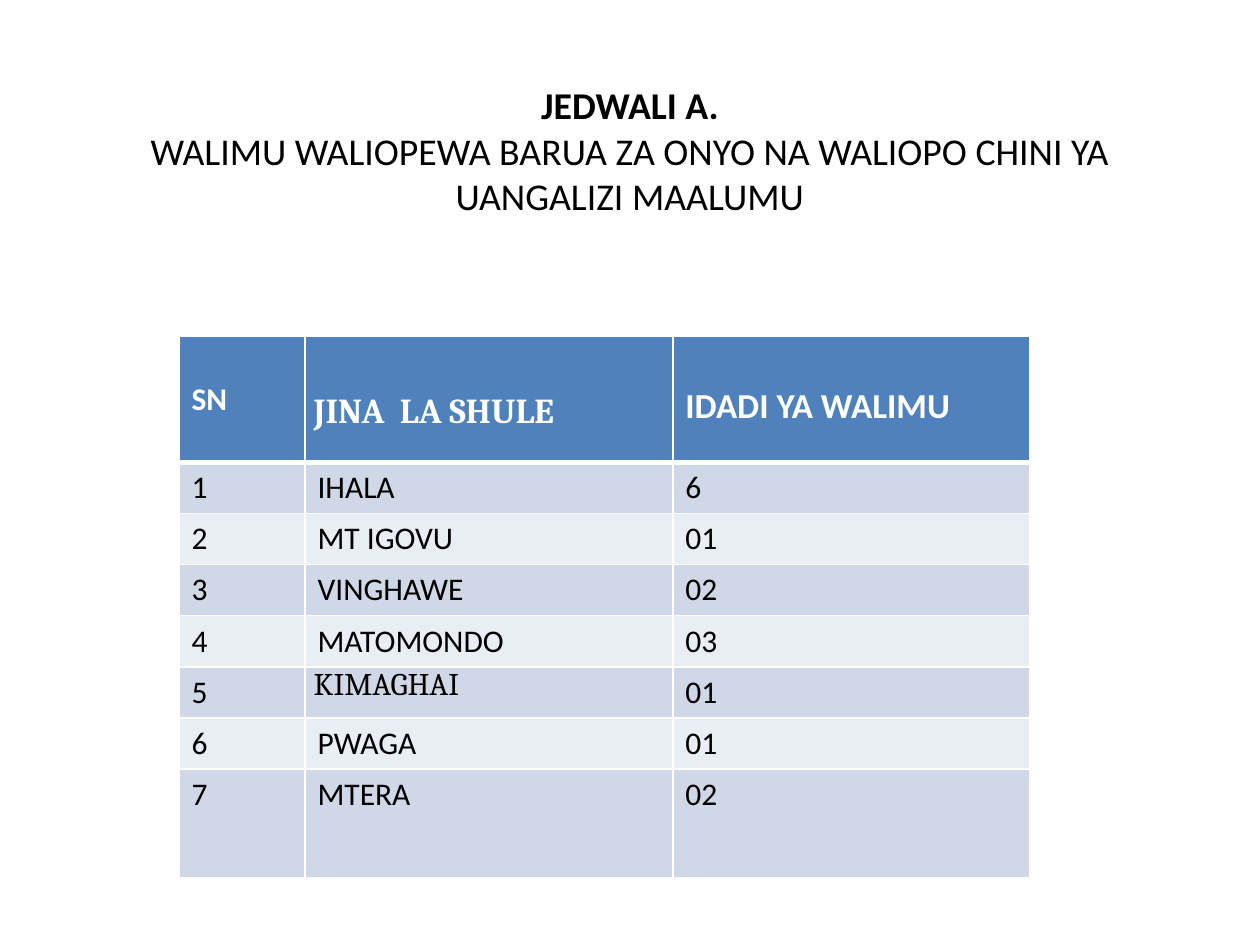
from lxml.etree import SubElement
from pptx import Presentation
from pptx.dml.color import RGBColor
from pptx.enum.text import MSO_ANCHOR, MSO_AUTO_SIZE, PP_ALIGN
from pptx.oxml.ns import qn
from pptx.util import Inches, Pt

BLACK = RGBColor(0x00, 0x00, 0x00)
WHITE = RGBColor(0xFF, 0xFF, 0xFF)
HEADER_BLUE = RGBColor(0x4F, 0x81, 0xBD)
BANDS = [RGBColor(0xD0, 0xD8, 0xE8), RGBColor(0xE9, 0xED, 0xF4)]

# Content
TITLE = "JEDWALI A."
SUBTITLE = "WALIMU WALIOPEWA BARUA ZA ONYO NA WALIOPO CHINI YA UANGALIZI MAALUMU"
HEADERS = [  # text, size, font, top margin
    ("SN", 18, "Calibri", 0.35),
    ("JINA  LA SHULE", 20, "Cambria", 0.44),
    ("IDADI YA WALIMU", 20, "Calibri", 0.39),
]
SCHOOLS = [
    ("1", "IHALA", "6"),
    ("2", "MT IGOVU", "01"),
    ("3", "VINGHAWE", "02"),
    ("4", "MATOMONDO", "03"),
    ("5", "KIMAGHAI", "01"),
    ("6", "PWAGA", "01"),
    ("7", "MTERA", "02"),
]
COL_WIDTHS = [1, 2.92, 2.83]
ROW_HEIGHTS = [1] + [0.4] * 6 + [0.86]


def add_text(p, text, size=18, font="Calibri", color=BLACK, bold=False):
    r = p.add_run()
    r.text = text
    r.font.size = Pt(size)
    r.font.name = font
    r.font.bold = bold
    r.font.color.rgb = color


def set_borders(cell, top=1, bottom=1):
    tc_pr = cell._tc.get_or_add_tcPr()
    widths = {"lnL": 1, "lnR": 1, "lnT": top, "lnB": bottom}
    for side, width in widths.items():
        ln = SubElement(tc_pr, qn("a:" + side), w=str(Pt(width)))
        fill = SubElement(ln, qn("a:solidFill"))
        SubElement(fill, qn("a:srgbClr"), val=str(WHITE))


def format_cell(cell, text, fill, top_margin=0.05, top=1, bottom=1, **fmt):
    set_borders(cell, top, bottom)
    cell.fill.solid()
    cell.fill.fore_color.rgb = fill
    cell.margin_top = Inches(top_margin)
    p = cell.text_frame.paragraphs[0]
    if fmt.get("font") == "Cambria":
        cell.margin_left = cell.margin_right = Inches(0.07)
        cell.margin_bottom = 0
        p.alignment = PP_ALIGN.JUSTIFY
        p.space_after = Pt(8)
    add_text(p, text, **fmt)


prs = Presentation()
prs.slide_width, prs.slide_height = Inches(10), Inches(7.5)
s = prs.slides.add_slide(prs.slide_layouts[5])

# Title
title = s.shapes.title
title.left, title.top = Inches(0.5), Inches(0.3)
title.width, title.height = Inches(9), Inches(1.78)
tf = title.text_frame
tf.word_wrap = True
tf.auto_size = MSO_AUTO_SIZE.NONE
tf.vertical_anchor = MSO_ANCHOR.MIDDLE
p = tf.paragraphs[0]
p.alignment = PP_ALIGN.CENTER
add_text(p, TITLE, size=21.6, bold=True)
p.add_line_break()
add_text(p, SUBTITLE, size=21.6)

# Table grid
table = s.shapes.add_table(
    len(ROW_HEIGHTS), len(COL_WIDTHS), Inches(1.42), Inches(2.67),
    Inches(sum(COL_WIDTHS)), Inches(sum(ROW_HEIGHTS))).table
for col, width in zip(table.columns, COL_WIDTHS):
    col.width = Inches(width)
for row, height in zip(table.rows, ROW_HEIGHTS):
    row.height = Inches(height)

# Header row
for c, (text, size, font, margin) in enumerate(HEADERS):
    format_cell(table.cell(0, c), text, HEADER_BLUE, top_margin=margin,
                bottom=3, size=size, font=font, color=WHITE, bold=True)

# School rows
for i, school in enumerate(SCHOOLS):
    for c, text in enumerate(school):
        cambria = text == "KIMAGHAI"
        format_cell(table.cell(i + 1, c), text, BANDS[i % 2],
                    top_margin=0 if cambria else 0.05,
                    top=3 if i == 0 else 1,
                    font="Cambria" if cambria else "Calibri")

prs.save("out.pptx")
